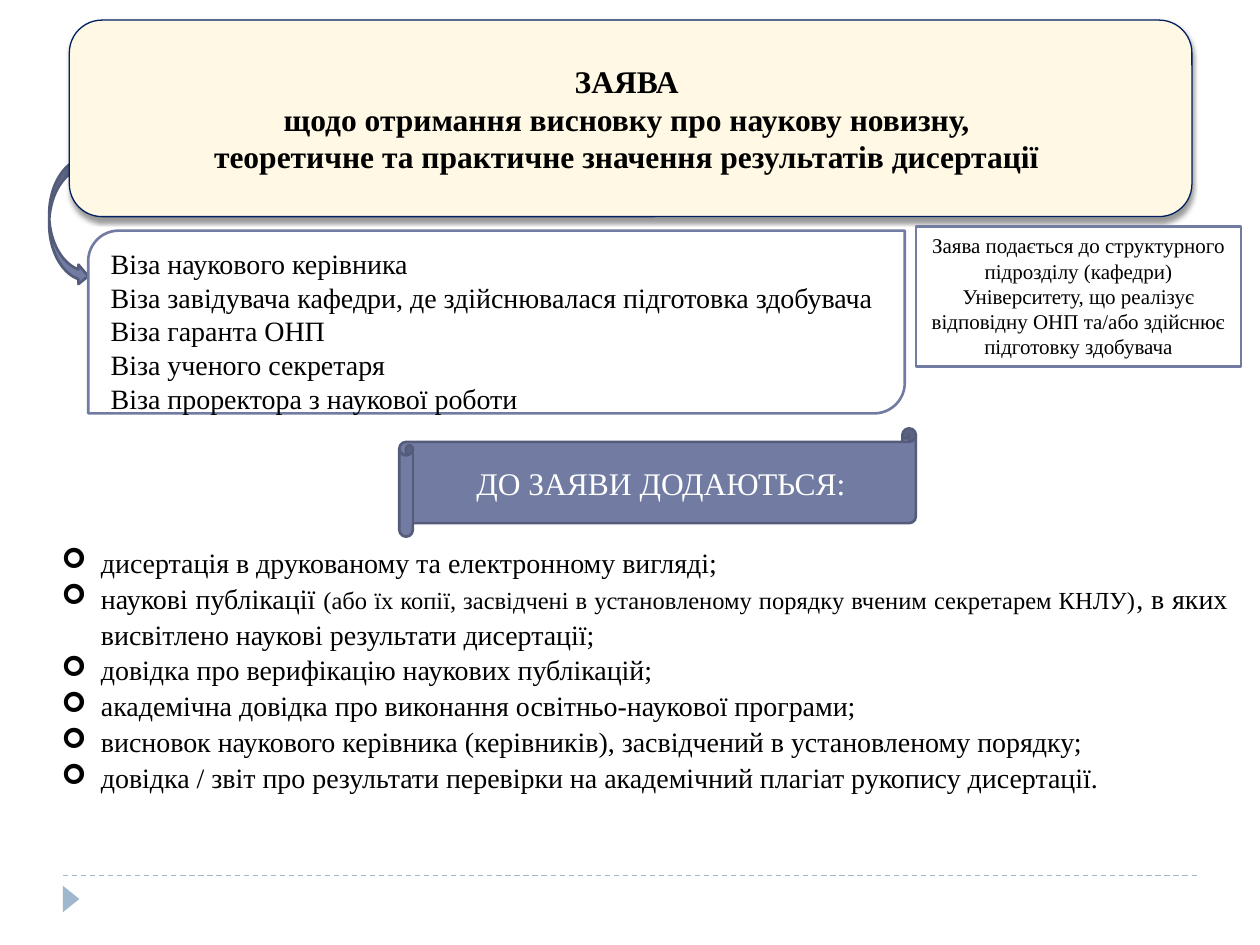
from lxml import etree
from pptx import Presentation
from pptx.dml.color import RGBColor
from pptx.enum import dml, shapes, text
from pptx.oxml import parse_xml
from pptx.oxml.ns import qn
from pptx.util import Pt

FONT = "Times New Roman"
BLACK = RGBColor(0x00, 0x00, 0x00)
WHITE = RGBColor(0xFF, 0xFF, 0xFF)
CREAM = RGBColor(0xFE, 0xF8, 0xE4)
NAVY = RGBColor(0x00, 0x20, 0x60)
SLATE = RGBColor(0x72, 0x7C, 0xA3)
DARK = RGBColor(0x54, 0x5C, 0x79)
PALE = RGBColor(0x9F, 0xB8, 0xCD)

TITLE = [
    "ЗАЯВА ",
    "щодо отримання висновку про наукову новизну, ",
    "теоретичне та практичне значення результатів дисертації ",
]
VISAS = [
    "Віза наукового керівника",
    "Віза завідувача кафедри, де здійснювалася підготовка здобувача",
    "Віза гаранта ОНП",
    "Віза ученого секретаря",
    "Віза проректора з наукової роботи",
]
NOTE = ("Заява подається до структурного підрозділу (кафедри) Університету, "
        "що реалізує відповідну ОНП та/або здійснює підготовку здобувача")
BANNER = "ДО ЗАЯВИ ДОДАЮТЬСЯ:"
# Each item is a list of (text, size) runs
ITEMS = [
    [("дисертація в друкованому та електронному вигляді;", 16)],
    [("наукові публікації ", 16),
     ("(або їх копії, засвідчені в установленому порядку вченим секретарем КНЛУ)", 14),
     (", в яких висвітлено наукові результати дисертації;", 16)],
    [("довідка про верифікацію наукових публікацій;", 16)],
    [("академічна довідка про виконання освітньо-наукової програми;", 16)],
    [("висновок наукового керівника (керівників), засвідчений в установленому порядку; ", 16)],
    [("довідка / звіт про результати перевірки на академічний плагіат рукопису дисертації.", 16)],
]

# Left, top, width, height in points
CARD = (39.6, 11.5, 641.5, 112.3)
ARROW = (28.1, 90, 22.3, 73.4)
PANEL = (50.4, 131.8, 466.6, 104.4)
VISA = (56.2, 136.8, 455.8, 104.4)
SCROLL = (228.2, 244.8, 295.2, 61.9)
SIDE = (523.4, 129.6, 185.8, 79.9)
LIST = (28.1, 306.7, 680.4, 172.1)
MARK = (33.1, 509, 15.1, 9.4)
RULE = (36, 500.4, 684, 500.4)

SHADOW = """<a:effectLst xmlns:a="http://schemas.openxmlformats.org/drawingml/2006/main">
<a:outerShdw blurRad="38100" dist="25400" dir="5400000" rotWithShape="0">
<a:srgbClr val="000000"><a:alpha val="40000"/></a:srgbClr></a:outerShdw></a:effectLst>"""

Kind = shapes.MSO_SHAPE
Align = text.PP_ALIGN
Anchor = text.MSO_ANCHOR


def add(slide, kind, box, fill, line=None, width=1.5):
    shape = slide.shapes.add_shape(kind, *map(Pt, box))
    shape.shadow.inherit = False
    shape.fill.solid()
    shape.fill.fore_color.rgb = fill
    if line is None:
        shape.line.fill.background()
    else:
        shape.line.color.rgb = line
        shape.line.width = Pt(width)
    return shape


def style(font, size, color=BLACK, bold=False):
    font.name, font.size, font.bold = FONT, Pt(size), bold
    font.color.rgb = color


def write(shape, lines, size, align, anchor, color=BLACK, bold=False):
    frame = shape.text_frame
    frame.auto_size = text.MSO_AUTO_SIZE.NONE
    frame.word_wrap = True
    frame.vertical_anchor = anchor
    frame.text = "\n".join(lines)
    for para in frame.paragraphs:
        para.alignment = align
        for run in para.runs:
            style(run.font, size, color, bold)


def bullet(para):
    props = para._p.get_or_add_pPr()
    props.set("marL", str(Pt(22.5)))
    props.set("indent", str(-Pt(22.5)))
    etree.SubElement(props, qn("a:buFont"), typeface="Wingdings")
    etree.SubElement(props, qn("a:buChar"), char="➢")


def fill_list(frame):
    frame.word_wrap = True
    for i, item in enumerate(ITEMS):
        para = frame.paragraphs[0] if i == 0 else frame.add_paragraph()
        bullet(para)
        para.alignment = Align.JUSTIFY
        para.line_spacing = 1.07
        for words, size in item:
            run = para.add_run()
            run.text = words
            style(run.font, size)


def main():
    deck = Presentation()
    deck.slide_width, deck.slide_height = Pt(720), Pt(540)
    slide = deck.slides.add_slide(deck.slide_layouts[5])

    rule = slide.shapes.add_connector(shapes.MSO_CONNECTOR.STRAIGHT, *map(Pt, RULE))
    rule.line.color.rgb = PALE
    rule.line.width = Pt(0.75)
    rule.line.dash_style = dml.MSO_LINE.DASH
    etree.SubElement(rule._element.spPr, qn("a:effectLst"))
    add(slide, Kind.ISOSCELES_TRIANGLE, MARK, PALE).rotation = 90

    add(slide, Kind.CURVED_RIGHT_ARROW, ARROW, SLATE, DARK)
    card = add(slide, Kind.ROUNDED_RECTANGLE, CARD, CREAM, NAVY, 0.75)
    props = card._element.spPr
    props.replace(props.find(qn("a:effectLst")), parse_xml(SHADOW))
    title = slide.shapes.title
    title.left, title.top, title.width, title.height = map(Pt, CARD)
    write(title, TITLE, 18, Align.CENTER, Anchor.MIDDLE, bold=True)
    card._element.addnext(title._element)  # title text sits above the card

    add(slide, Kind.ROUND_2_DIAG_RECTANGLE, PANEL, WHITE, SLATE)
    visa = slide.shapes.add_textbox(*map(Pt, VISA))
    write(visa, VISAS, 16, Align.LEFT, Anchor.MIDDLE)
    visa.text_frame.word_wrap = False

    banner = add(slide, Kind.HORIZONTAL_SCROLL, SCROLL, SLATE, DARK)
    write(banner, [BANNER], 18, Align.CENTER, Anchor.MIDDLE, WHITE)
    side = add(slide, Kind.RECTANGLE, SIDE, WHITE, SLATE)
    write(side, [NOTE], 12, Align.CENTER, Anchor.TOP)

    fill_list(slide.shapes.add_textbox(*map(Pt, LIST)).text_frame)
    deck.save("out.pptx")


if __name__ == "__main__":
    main()
